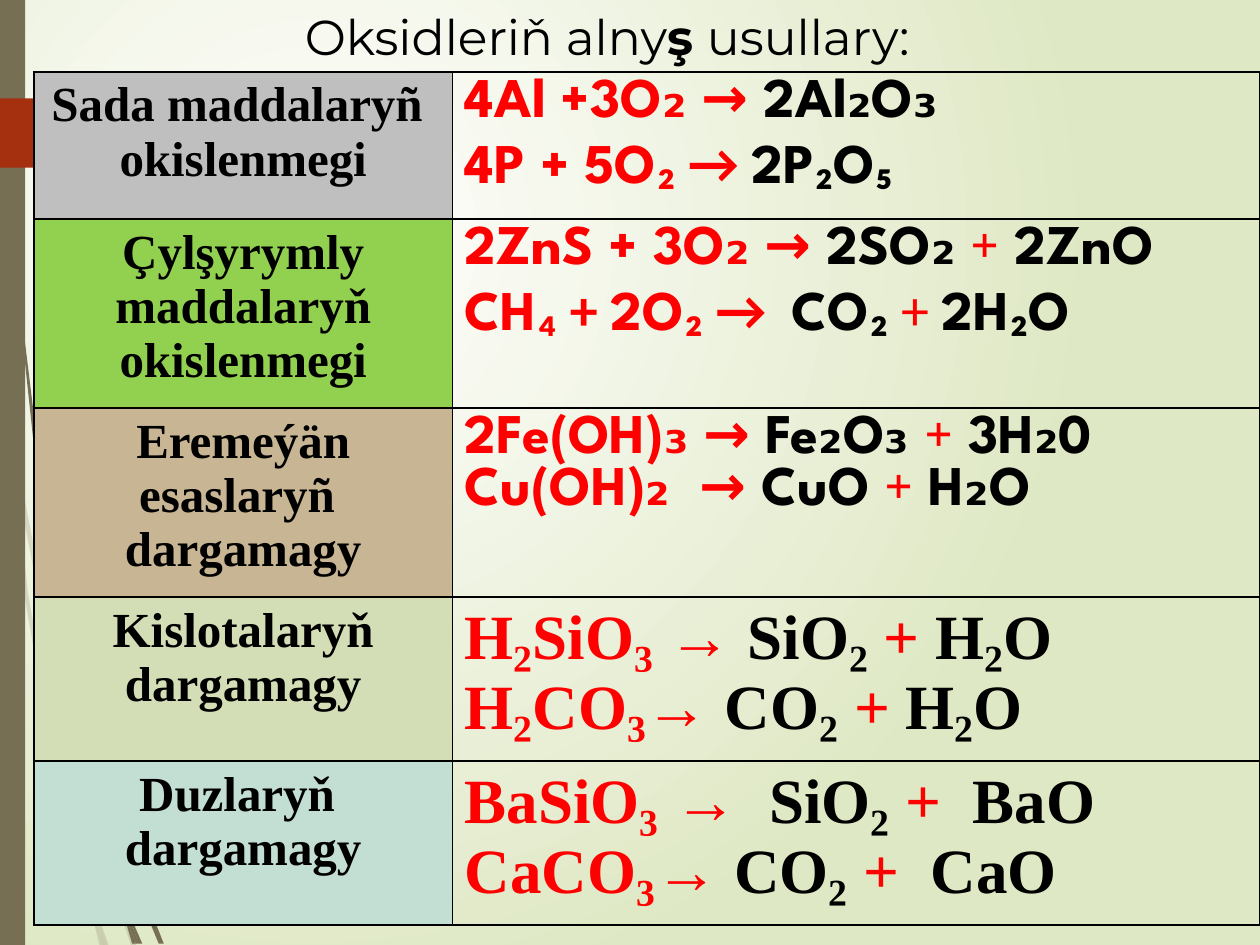
from dataclasses import dataclass
from itertools import cycle

from lxml.etree import SubElement
from pptx import Presentation
from pptx.dml.color import RGBColor
from pptx.enum.shapes import MSO_SHAPE
from pptx.enum.text import MSO_ANCHOR, PP_ALIGN
from pptx.oxml import parse_xml
from pptx.oxml.ns import nsdecls, qn
from pptx.util import Inches, Pt

BLACK = RGBColor(0x00, 0x00, 0x00)
RED = RGBColor(0xFF, 0x00, 0x00)
WHITE = RGBColor(0xFF, 0xFF, 0xFF)
PALE_GREEN = RGBColor(0xDF, 0xE8, 0xC4)
OLIVE = RGBColor(0x76, 0x6F, 0x54)
RUST = RGBColor(0xA5, 0x30, 0x10)

SERIF = "Times New Roman"
SPARTAN = "League Spartan"
CALIBRI = "Calibri"


@dataclass
class Equation:
    """A bar in the text switches between the row font and Calibri."""
    reactants: str
    products: tuple[str, ...]
    plus: str = "+ "


@dataclass
class Method:
    labels: tuple[str, ...]
    fill: RGBColor
    height: float
    equations: tuple[Equation, ...]
    font: str = SPARTAN
    size: int = 32
    bold_plus: bool = False


@dataclass
class Wisp:
    points: tuple[tuple[float, float], ...]
    opacity: int = 100


METHODS = (
    Method(("Sada maddalaryñ ", "okislenmegi"), RGBColor(0xBF, 0xBF, 0xBF), 1.17,
           (Equation("4Al +3O₂ → ", ("2Al₂O₃",)),
            Equation("4P + 5O|₂ → ", ("2P|₂|O|₅",)))),
    Method(("Çylşyrymly maddalaryň okislenmegi",), RGBColor(0x92, 0xD0, 0x50), 1.5,
           (Equation("2ZnS + 3O₂ → ", ("2SO₂ ", "2ZnO")),
            Equation("CH|₄ + |2O|₂ →  ", ("CO|₂ ", "2H|₂|O"), "|+ "))),
    Method(("Eremeýän esaslaryñ ", "dargamagy"), RGBColor(0xC8, 0xB5, 0x94), 1.5,
           (Equation("2Fe(OH)₃ → ", ("Fe₂O₃ ", "3H₂0")),
            Equation("Cu(OH)₂  → ", ("CuO ", "H₂O")))),
    Method(("Kislotalaryň dargamagy",), RGBColor(0xD4, 0xDE, 0xB6), 1.3,
           (Equation("H₂SiO₃ → ", ("SiO₂ ", "H₂O")),
            Equation("H₂CO₃→ ", ("CO₂ ", "H₂O"))), SERIF, 36, True),
    Method(("Duzlaryň ", "dargamagy"), RGBColor(0xC3, 0xDE, 0xD3), 1.3,
           (Equation("BaSiO₃ →  ", ("SiO₂ ", "BaO"), "+  "),
            Equation("CaCO₃→ ", ("CO₂ ", "CaO"), "+  ")), SERIF, 36, True),
)

WISPS = (
    Wisp(((0.4, 5.22), (0.59, 5.99), (0.59, 5.86), (0.43, 5.2), (0.1, 3.45),
          (0.12, 3.76)), 20),
    Wisp(((0.64, 6.07), (0.61, 5.96), (0.61, 6.1), (0.85, 6.94), (1.04, 7.5),
          (1.08, 7.5), (0.88, 6.92)), 20),
    Wisp(((0.83, 7.5), (0.86, 7.5), (0.73, 7.11)), 20),
    Wisp(((0.64, 6.83), (0.48, 6.19), (0.22, 4.69), (0.12, 3.76), (0.08, 3.5),
          (0.19, 4.7), (0.45, 6.21), (0.64, 6.93), (0.7, 7.14), (0.69, 7.07)), 20),
    Wisp(((0.7, 7.14), (0.79, 7.5), (0.82, 7.5)), 20),
    Wisp(((0.67, 6.92), (0.65, 6.83), (0.7, 7.14), (0.82, 7.5), (0.83, 7.5),
          (0.73, 7.11)), 20),
    Wisp(((0.05, 1.1), (0.14, 2.33), (0.27, 3.55), (0.46, 4.77), (0.47, 4.81),
          (0.45, 4.53), (0.3, 3.55), (0.15, 2.32), (0.06, 1.09), (0.04, 0.48),
          (0.03, 0), (0.02, 0), (0.03, 0.48))),
    Wisp(((0.94, 6.49), (0.91, 6.41), (0.91, 6.56), (1.09, 7.08), (1.26, 7.49),
          (1.3, 7.49), (1.13, 7.06))),
    Wisp(((1.1, 7.49), (1.13, 7.49), (1, 7.19))),
    Wisp(((0.97, 7.22), (1.05, 7.49), (1.08, 7.49))),
    Wisp(((0.96, 7.06), (0.91, 6.91), (0.97, 7.22), (1.08, 7.49), (1.1, 7.49),
          (1, 7.19))),
)


def add_text(paragraph, text: str, *, font: str, size: int,
             color: RGBColor = BLACK, bold: bool = True) -> None:
    run = paragraph.add_run()
    run.text = text
    run.font.name = font
    run.font.size = Pt(size)
    run.font.bold = bold
    run.font.color.rgb = color


def paint(shape, color: RGBColor, opacity: int = 100) -> None:
    shape.shadow.inherit = False
    shape.fill.solid()
    shape.fill.fore_color.rgb = color
    shape.line.fill.background()
    if opacity < 100:
        color_element = shape.fill._xPr.find(".//" + qn("a:srgbClr"))
        SubElement(color_element, qn("a:alpha"), val=str(opacity * 1000))


def add_outline(slide, points, color: RGBColor, opacity: int = 100) -> None:
    corners = [(Inches(x), Inches(y)) for x, y in points]
    builder = slide.shapes.build_freeform(*corners[0])
    builder.add_line_segments(corners[1:], close=True)
    paint(builder.convert_to_shape(), color, opacity)


def set_background(slide) -> None:
    fill = slide.background.fill
    fill.gradient()
    for stop, color, position in zip(fill.gradient_stops, (WHITE, PALE_GREEN), (0, 1)):
        stop.color.rgb = color
        stop.position = position
    gradient = slide.element.find(".//" + qn("a:gradFill"))
    gradient.replace(gradient.find(qn("a:lin")), parse_xml(
        f'<a:path {nsdecls("a")} path="circle">'
        '<a:fillToRect l="50000" t="50000" r="100000" b="100000"/></a:path>'))


def set_borders(cell) -> None:
    properties = cell._tc.get_or_add_tcPr()
    for index, side in enumerate("LRTB"):
        properties.insert(index, parse_xml(
            f'<a:ln{side} {nsdecls("a")} w="12700"><a:solidFill>'
            f'<a:srgbClr val="{BLACK}"/></a:solidFill></a:ln{side}>'))


def get_paragraph(text_frame, index: int):
    return text_frame.paragraphs[0] if index == 0 else text_frame.add_paragraph()


def write_equation(paragraph, equation: Equation, method: Method) -> None:
    terms = [(equation.reactants, RED, True)]
    for index, product in enumerate(equation.products):
        if index:
            terms.append((equation.plus, RED, method.bold_plus))
        terms.append((product, BLACK, True))
    for term, color, bold in terms:
        for text, font in zip(term.split("|"), cycle((method.font, CALIBRI))):
            if text:
                add_text(paragraph, text, font=font, size=method.size,
                         color=color, bold=bold)


def add_methods_table(slide) -> None:
    height = sum(method.height for method in METHODS)
    table = slide.shapes.add_table(len(METHODS), 2, Inches(0.27), Inches(0.57),
                                   Inches(9.73), Inches(height)).table
    table.first_row = table.horz_banding = False
    for column, width in zip(table.columns, (3.32, 6.41)):
        column.width = Inches(width)
    for row, method in zip(table.rows, METHODS):
        row.height = Inches(method.height)
        label_cell, equation_cell = row.cells
        label_cell.fill.solid()
        label_cell.fill.fore_color.rgb = method.fill
        equation_cell.fill.background()
        for index, label in enumerate(method.labels):
            paragraph = get_paragraph(label_cell.text_frame, index)
            paragraph.alignment = PP_ALIGN.CENTER
            add_text(paragraph, label, font=SERIF, size=28)
        for index, equation in enumerate(method.equations):
            paragraph = get_paragraph(equation_cell.text_frame, index)
            write_equation(paragraph, equation, method)
        for cell in row.cells:
            set_borders(cell)


def add_title(slide) -> None:
    title = slide.shapes.title
    title.left, title.top, title.width, title.height = map(Inches, (2.32, 0, 6.14, 0.57))
    title.text_frame.word_wrap = True
    title.text_frame.vertical_anchor = MSO_ANCHOR.TOP
    paragraph = title.text_frame.paragraphs[0]
    paragraph.alignment = PP_ALIGN.LEFT
    for text, bold in (("Oksidleriň alny", False), ("ş ", True), ("usullary:", False)):
        add_text(paragraph, text, font="Montserrat", size=28, bold=bold)


def main() -> None:
    presentation = Presentation()
    presentation.slide_width, presentation.slide_height = Inches(10), Inches(7.5)
    slide = presentation.slides.add_slide(presentation.slide_layouts[5])
    set_background(slide)
    # Side decoration: wisps, bar and pointed tag
    for wisp in WISPS:
        add_outline(slide, wisp.points, OLIVE, wisp.opacity)
    bar = slide.shapes.add_shape(MSO_SHAPE.RECTANGLE, 0, 0, Inches(0.2), Inches(7.5))
    paint(bar, OLIVE)
    add_outline(slide, ((0, 0.78), (1.22, 0.78), (1.49, 1.06), (1.22, 1.33), (0, 1.33)), RUST)
    # Content
    add_title(slide)
    add_methods_table(slide)
    presentation.save("out.pptx")


if __name__ == "__main__":
    main()
